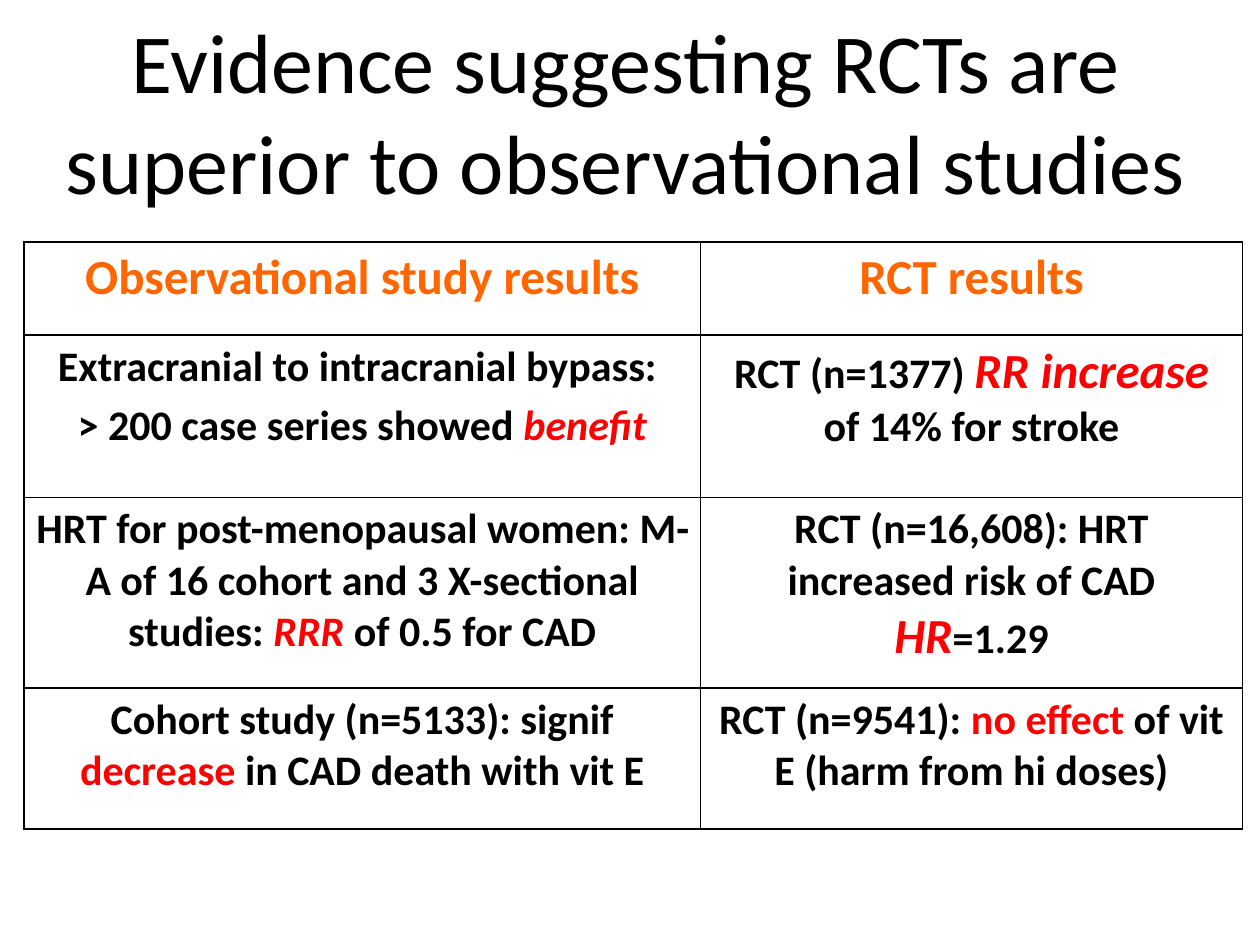
from dataclasses import dataclass

from lxml import etree
from pptx import Presentation
from pptx.dml.color import RGBColor
from pptx.enum.text import MSO_ANCHOR, PP_ALIGN
from pptx.oxml.ns import qn
from pptx.util import Inches, Pt

CENTER = PP_ALIGN.CENTER
MIDDLE = MSO_ANCHOR.MIDDLE


@dataclass(frozen=True)
class Theme:
    font: str = "Calibri"
    text: str = "000000"
    header: str = "FF6600"
    accent: str = "FF0000"
    border: str = "000000"
    title_size: int = 48
    large_size: int = 28
    body_size: int = 24
    space_ratio: float = 0.2
    border_width: int = 1


theme = Theme()

# Run styles: colour, size, italic
HEADER = (theme.header, theme.large_size, False)
PLAIN = (theme.text, theme.body_size, False)
RED = (theme.accent, theme.body_size, False)
RED_ITALIC = (theme.accent, theme.body_size, True)
RED_LARGE = (theme.accent, theme.large_size, True)

# Rows of cells; a cell is a list of paragraphs, a paragraph a list of runs
ROWS = [
    [
        [[("Observational study results", HEADER)]],
        [[("RCT results", HEADER)]],
    ],
    [
        [
            [("Extracranial to intracranial bypass: ", PLAIN)],
            [("> 200 case series showed ", PLAIN), ("benefit", RED_ITALIC)],
        ],
        [[("RCT (n=1377) ", PLAIN), ("RR increase ", RED_LARGE),
          ("of 14% for stroke", PLAIN)]],
    ],
    [
        [[("HRT for post-menopausal women: M-A of 16 cohort and 3 X-sectional studies: ", PLAIN),
          ("RRR ", RED_ITALIC), ("of 0.5 for CAD", PLAIN)]],
        [[("RCT (n=16,608): HRT increased risk of CAD ", PLAIN),
          ("HR", RED_LARGE), ("=1.29", PLAIN)]],
    ],
    [
        [[("Cohort study (n=5133): signif ", PLAIN), ("decrease ", RED),
          ("in CAD death with vit E", PLAIN)]],
        [[("RCT (n=9541): ", PLAIN), ("no effect ", RED),
          ("of vit E (harm from hi doses)", PLAIN)]],
    ],
]
COLUMN_WIDTHS = [5.37, 4.3]
ROW_HEIGHTS = [0.74, 1.29, 1.51, 1.12]


def set_borders(cell):
    properties = cell._tc.get_or_add_tcPr()
    for position, side in enumerate(("a:lnL", "a:lnR", "a:lnT", "a:lnB")):
        line = etree.Element(qn(side), w=str(Pt(theme.border_width)))
        fill = etree.SubElement(line, qn("a:solidFill"))
        etree.SubElement(fill, qn("a:srgbClr"), val=theme.border)
        properties.insert(position, line)


def fill_cell(cell, paragraphs):
    cell.margin_left = cell.margin_right = Inches(0.09)
    cell.margin_top = cell.margin_bottom = Inches(0.05)
    cell.fill.background()
    set_borders(cell)
    frame = cell.text_frame
    for index, runs in enumerate(paragraphs):
        paragraph = frame.add_paragraph() if index else frame.paragraphs[0]
        paragraph.alignment = CENTER
        paragraph.font.name = theme.font
        paragraph.font.bold = True
        first_size = runs[0][1][1]
        paragraph.space_before = Pt(first_size * theme.space_ratio)
        for text, (color, size, italic) in runs:
            run = paragraph.add_run()
            run.text = text
            run.font.name = theme.font
            run.font.bold = True
            run.font.size = Pt(size)
            run.font.italic = italic
            run.font.color.rgb = RGBColor.from_string(color)


presentation = Presentation()
presentation.slide_width = Inches(10)
presentation.slide_height = Inches(7.5)
slide = presentation.slides.add_slide(presentation.slide_layouts[5])

# Title
title = slide.shapes.title
title.left, title.top = Inches(0.41), Inches(0.25)
title.width, title.height = Inches(9.11), Inches(1.25)
title.text_frame.text = "Evidence suggesting RCTs are superior to observational studies"
title.text_frame.word_wrap = True
title.text_frame.vertical_anchor = MIDDLE
paragraph = title.text_frame.paragraphs[0]
paragraph.alignment = CENTER
paragraph.font.name = theme.font
paragraph.font.size = Pt(theme.title_size)
paragraph.font.color.rgb = RGBColor.from_string(theme.text)

# Comparison table
table = slide.shapes.add_table(
    len(ROW_HEIGHTS), len(COLUMN_WIDTHS), Inches(0.19), Inches(1.92),
    Inches(sum(COLUMN_WIDTHS)), Inches(sum(ROW_HEIGHTS)),
).table
table.first_row = False
table.horz_banding = False
for column, width in zip(table.columns, COLUMN_WIDTHS):
    column.width = Inches(width)
for row, height, contents in zip(table.rows, ROW_HEIGHTS, ROWS):
    row.height = Inches(height)
    for cell, paragraphs in zip(row.cells, contents):
        fill_cell(cell, paragraphs)

presentation.save("out.pptx")
